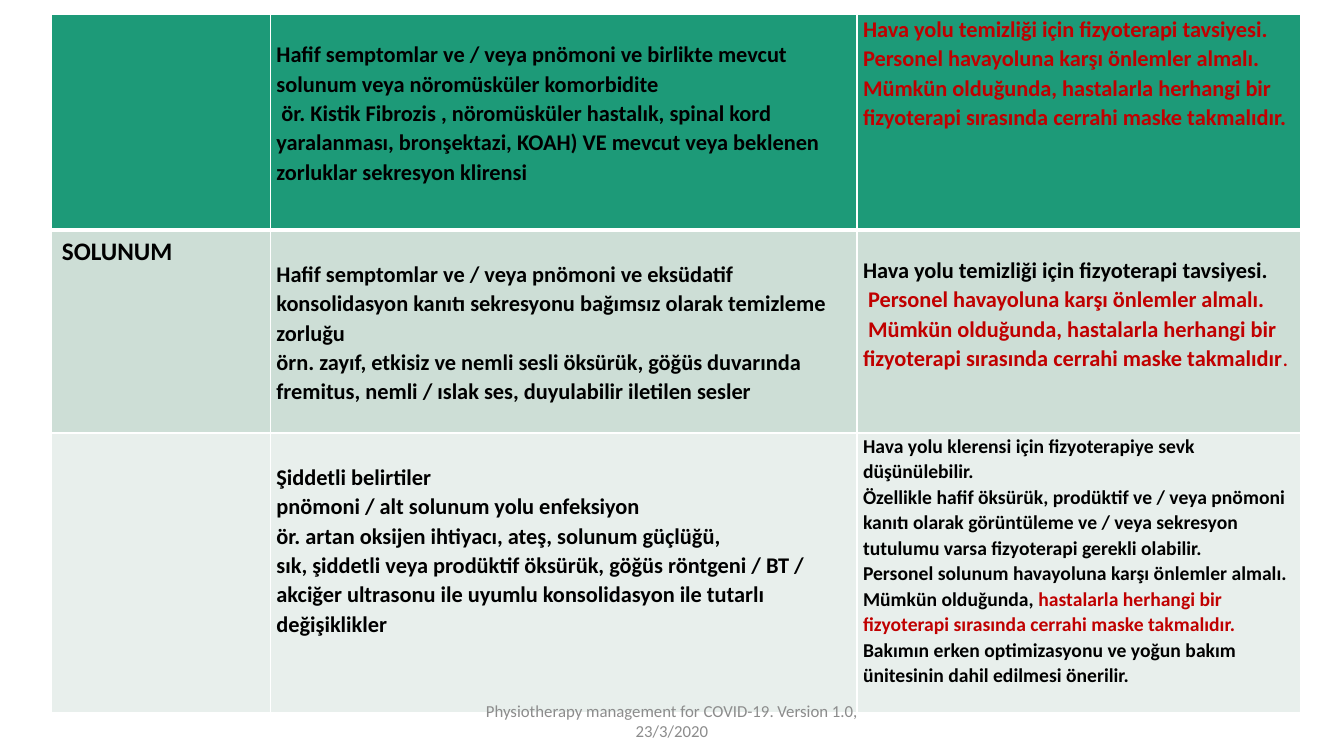
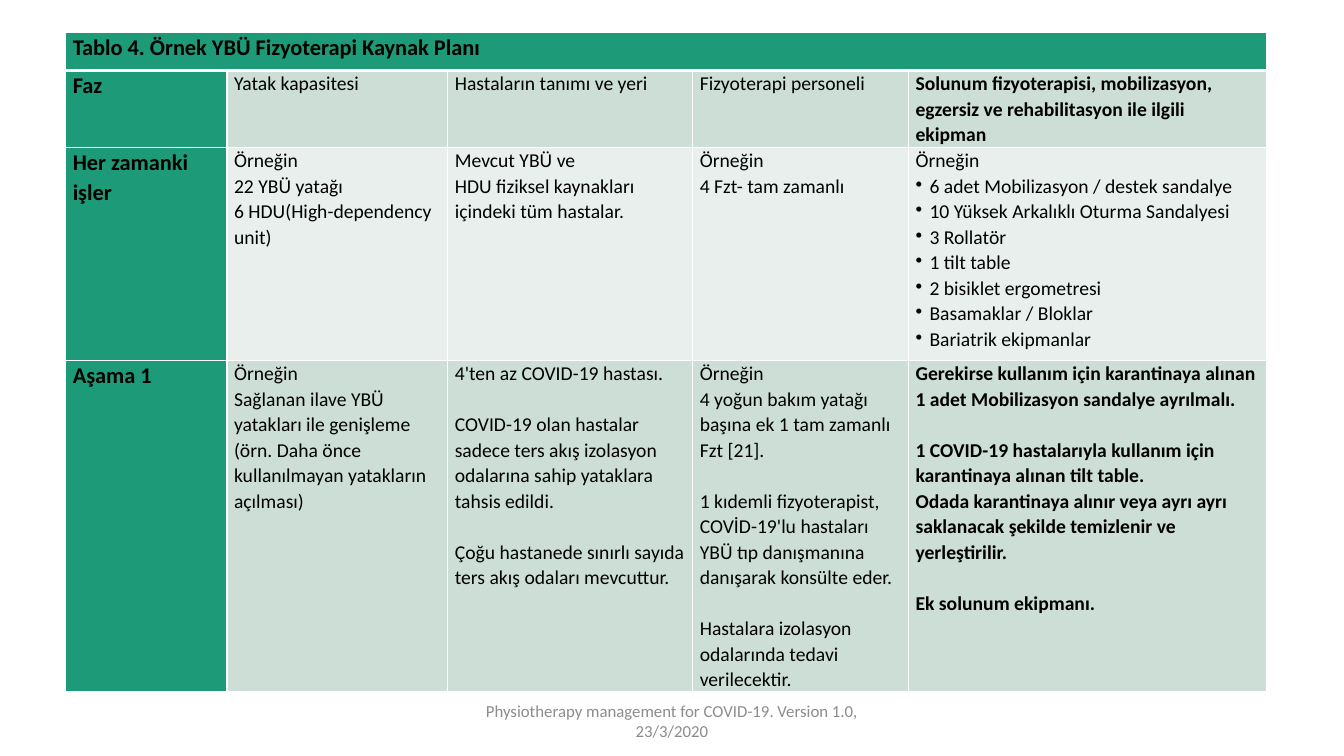
from dataclasses import dataclass

from lxml.etree import SubElement
from pptx import Presentation
from pptx.dml.color import RGBColor
from pptx.enum.text import MSO_ANCHOR, PP_ALIGN
from pptx.oxml.ns import qn
from pptx.util import Pt

# Shared look
FONT = "Calibri"
GREEN, WHITE, BLACK = "1D9A78", "FFFFFF", "000000"
RED, GREY = "C00000", "8C8C8C"
BANDS = ("CDDED6", "E8EFEC")
LINE_SPACING = 1.07
FOOTER = "Physiotherapy management for COVID-19. Version 1.0, 23/3/2020"


@dataclass
class Run:
    text: str
    color: str = ""
    bold: bool = True


@dataclass
class Line:
    """A paragraph that needs more than plain text."""
    runs: list
    gap: bool = False
    bullet: bool = False


@dataclass
class Cell:
    lines: list
    size: float = 14
    bold: bool = True
    color: str = BLACK
    top: float = 0


def rgb(value):
    return RGBColor.from_string(value)


def style_font(font, size, color, bold=False):
    font.name, font.size, font.bold = FONT, Pt(size), bold
    font.color.rgb = rgb(color)


# Text helpers
def plain(*lines, **options):
    return Cell(list(lines), bold=False, **options)


def gap(text):
    return Line([Run(text)], gap=True)


def bullet(text):
    return Line([Run(text)], bullet=True)


def add_bullet(paragraph, indent=10):
    properties = paragraph._p.get_or_add_pPr()
    properties.set("marL", str(Pt(indent)))
    properties.set("indent", str(-Pt(indent)))
    SubElement(properties, qn("a:buChar")).set("char", "•")


def write_paragraph(paragraph, line, content):
    if isinstance(line, str):
        line = Line([Run(line)])
    paragraph.line_spacing = LINE_SPACING
    if line.gap:
        paragraph.space_before = Pt(content.size * 1.22 * LINE_SPACING)
    if line.bullet:
        add_bullet(paragraph)
    style_font(paragraph.font, content.size, content.color, content.bold)
    for part in line.runs:
        run = paragraph.add_run()
        run.text = part.text
        if part.color:
            run.font.color.rgb = rgb(part.color)
        if not part.bold:
            run.font.bold = False


def write_cell(cell, content, inset):
    cell.margin_left = cell.margin_right = Pt(inset)
    cell.margin_top, cell.margin_bottom = Pt(content.top), 0
    frame = cell.text_frame
    for index, line in enumerate(content.lines):
        paragraph = frame.add_paragraph() if index else frame.paragraphs[0]
        write_paragraph(paragraph, line, content)


# Table helpers
def set_borders(cell, top, bottom):
    properties = cell._tc.get_or_add_tcPr()
    for side, width in (("L", 1), ("R", 1), ("T", top), ("B", bottom)):
        border = SubElement(properties, qn(f"a:ln{side}"), w=str(Pt(width)))
        fill = SubElement(border, qn("a:solidFill"))
        SubElement(fill, qn("a:srgbClr"), val=WHITE)


def add_grid(slide, left, top, widths, heights, contents, inset, green_column=False):
    frame = slide.shapes.add_table(
        len(heights), len(widths), Pt(left), Pt(top), Pt(sum(widths)), Pt(sum(heights)))
    table = frame.table
    table.first_row = table.horz_banding = False
    for column, width in zip(table.columns, widths):
        column.width = Pt(width)
    for row_index, height in enumerate(heights):
        table.rows[row_index].height = Pt(height)
        for column_index in range(len(widths)):
            cell = table.cell(row_index, column_index)
            set_borders(cell, 3 if row_index == 1 else 1, 1 if row_index else 3)
            is_green = row_index == 0 or (green_column and column_index == 0)
            cell.fill.solid()
            cell.fill.fore_color.rgb = rgb(GREEN if is_green else BANDS[(row_index - 1) % 2])
            content = contents[row_index][column_index]
            if content:
                write_cell(cell, content, inset)
    return table


def add_footer(slide):
    box = slide.shapes.add_textbox(Pt(318), Pt(500.5), Pt(324), Pt(29))
    frame = box.text_frame
    frame.word_wrap = True
    frame.vertical_anchor = MSO_ANCHOR.MIDDLE
    paragraph = frame.paragraphs[0]
    paragraph.text = FOOTER
    paragraph.alignment = PP_ALIGN.CENTER
    style_font(paragraph.font, 12, GREY)


# Slide 1: respiratory indications
RESPIRATORY = [
    [
        None,
        Cell(["Hafif semptomlar ve / veya pnömoni ve birlikte mevcut solunum veya "
              "nöromüsküler komorbidite",
              " ör. Kistik Fibrozis , nöromüsküler hastalık, spinal kord yaralanması, "
              "bronşektazi, KOAH) VE mevcut veya beklenen zorluklar sekresyon klirensi"],
             size=16, top=18),
        Cell(["Hava yolu temizliği için fizyoterapi tavsiyesi.",
              "Personel havayoluna karşı önlemler almalı.",
              "Mümkün olduğunda, hastalarla herhangi bir fizyoterapi sırasında cerrahi "
              "maske takmalıdır."], size=16, color=RED),
    ],
    [
        Cell(["SOLUNUM"], size=18, top=3),
        Cell(["Hafif semptomlar ve / veya pnömoni ve eksüdatif konsolidasyon kanıtı "
              "sekresyonu bağımsız olarak temizleme zorluğu",
              "örn. zayıf, etkisiz ve nemli sesli öksürük, göğüs duvarında fremitus, "
              "nemli / ıslak ses, duyulabilir iletilen sesler"], size=16, top=21),
        Cell([Line([Run("Hava yolu temizliği için fizyoterapi tavsiyesi.", BLACK)]),
              " Personel havayoluna karşı önlemler almalı.",
              Line([Run(" Mümkün olduğunda, hastalarla herhangi bir fizyoterapi "
                        "sırasında cerrahi maske takmalıdır"), Run(".", bold=False)])],
             size=16, color=RED, top=18),
    ],
    [
        None,
        Cell(["Şiddetli belirtiler",
              "pnömoni / alt solunum yolu enfeksiyon",
              "ör. artan oksijen ihtiyacı, ateş, solunum güçlüğü,",
              "sık, şiddetli veya prodüktif öksürük, göğüs röntgeni / BT / akciğer "
              "ultrasonu ile uyumlu konsolidasyon ile tutarlı değişiklikler"],
             size=16, top=21),
        Cell(["Hava yolu klerensi için fizyoterapiye sevk düşünülebilir.",
              "Özellikle hafif öksürük, prodüktif ve / veya pnömoni kanıtı olarak "
              "görüntüleme ve / veya sekresyon tutulumu varsa fizyoterapi gerekli olabilir.",
              "Personel solunum havayoluna karşı önlemler almalı.",
              Line([Run("Mümkün olduğunda, "),
                    Run("hastalarla herhangi bir fizyoterapi sırasında cerrahi maske "
                        "takmalıdır.", RED)]),
              "Bakımın erken optimizasyonu ve yoğun bakım ünitesinin dahil edilmesi "
              "önerilir."]),
    ],
]

# Slide 2: intensive care resource plan
RESOURCES = [
    [Cell(["Tablo 4. Örnek YBÜ Fizyoterapi Kaynak Planı"], size=16), None, None, None, None],
    [
        Cell(["Faz"], size=16),
        plain("Yatak kapasitesi"),
        plain("Hastaların tanımı ve yeri"),
        plain("Fizyoterapi personeli"),
        Cell(["Solunum fizyoterapisi, mobilizasyon, egzersiz ve rehabilitasyon ile "
              "ilgili ekipman"]),
    ],
    [
        Cell(["Her zamanki işler"], size=16),
        plain("Örneğin", "22 YBÜ yatağı", "6 HDU(High-dependency unit)"),
        plain("Mevcut YBÜ ve", "HDU fiziksel kaynakları içindeki tüm hastalar."),
        plain("Örneğin", "4 Fzt- tam zamanlı"),
        plain("Örneğin", *map(bullet, (
            "6 adet Mobilizasyon / destek sandalye",
            "10 Yüksek Arkalıklı Oturma Sandalyesi",
            "3 Rollatör",
            "1 tilt table",
            "2 bisiklet ergometresi",
            "Basamaklar / Bloklar",
            "Bariatrik ekipmanlar"))),
    ],
    [
        Cell(["Aşama 1"], size=16),
        plain("Örneğin",
              "Sağlanan ilave YBÜ yatakları ile genişleme (örn. Daha önce "
              "kullanılmayan yatakların açılması)"),
        plain("4'ten az COVID-19 hastası.",
              gap("COVID-19 olan hastalar sadece ters akış izolasyon odalarına sahip "
                  "yataklara tahsis edildi."),
              gap("Çoğu hastanede sınırlı sayıda ters akış odaları mevcuttur.")),
        plain("Örneğin",
              "4 yoğun bakım yatağı başına ek 1 tam zamanlı Fzt [21].",
              gap("1 kıdemli fizyoterapist, COVİD-19'lu hastaları YBÜ tıp danışmanına "
                  "danışarak konsülte eder."),
              gap("Hastalara izolasyon odalarında tedavi verilecektir.")),
        Cell(["Gerekirse kullanım için karantinaya alınan 1 adet Mobilizasyon sandalye "
              "ayrılmalı.",
              gap("1 COVID-19 hastalarıyla kullanım için karantinaya alınan tilt table."),
              "Odada karantinaya alınır veya ayrı ayrı saklanacak şekilde temizlenir "
              "ve yerleştirilir.",
              gap("Ek solunum ekipmanı.")]),
    ],
]


def main():
    presentation = Presentation()
    presentation.slide_width, presentation.slide_height = Pt(960), Pt(540)
    blank = presentation.slide_layouts[6]

    slide = presentation.slides.add_slide(blank)
    table = add_grid(slide, 37, 10.3, [156.2, 419, 316.8], [154, 145, 200],
                     RESPIRATORY, inset=4.3)
    table.cell(1, 0).margin_left = Pt(7.2)
    add_footer(slide)

    slide = presentation.slides.add_slide(blank)
    table = add_grid(slide, 47, 23, [115.2, 157.7, 175, 154.1, 255.6], [27.4, 55, 152, 237],
                     RESOURCES, inset=5, green_column=True)
    table.cell(0, 0).merge(table.cell(0, 4))
    add_footer(slide)

    presentation.save("out.pptx")


if __name__ == "__main__":
    main()
